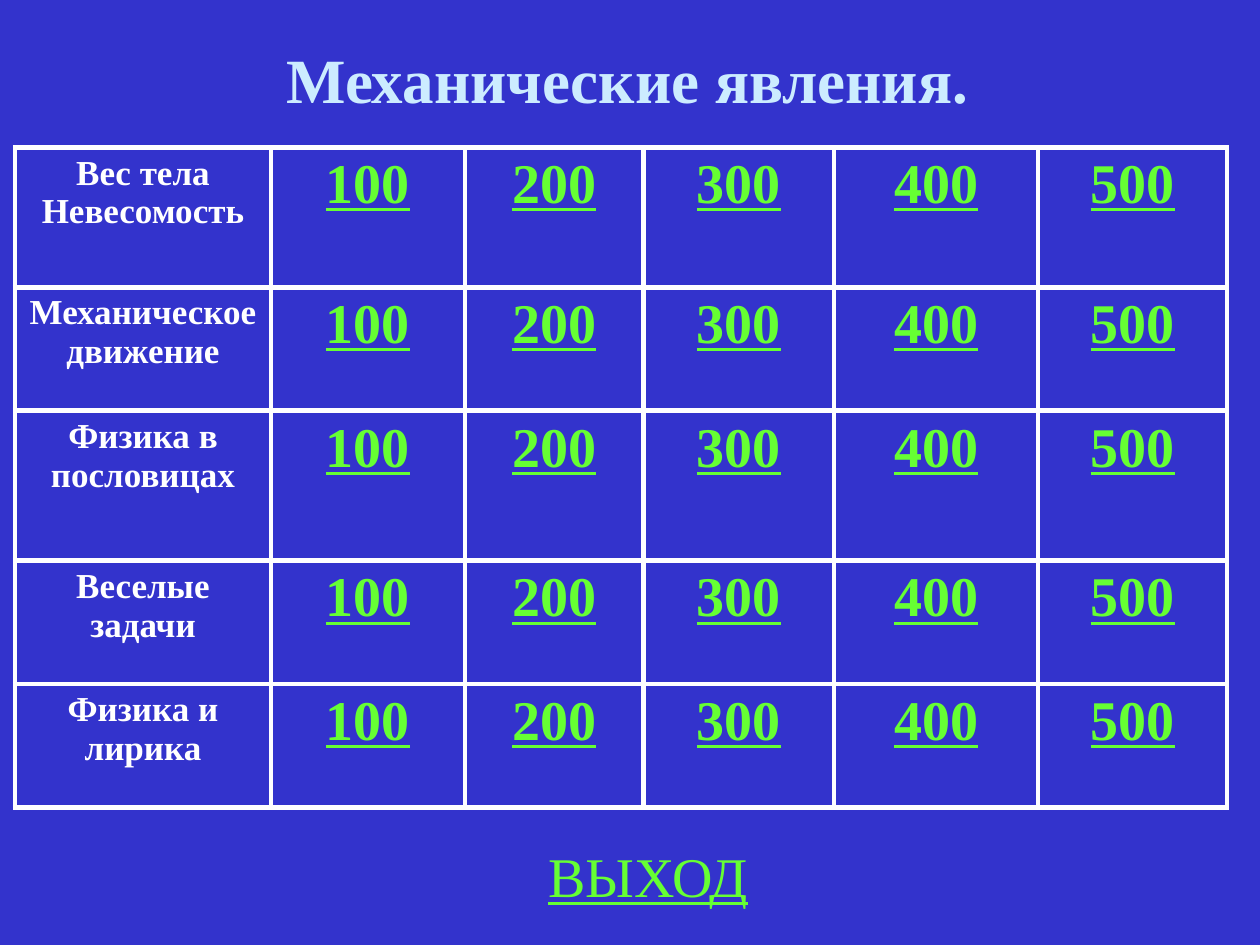
from lxml.etree import fromstring
from pptx import Presentation
from pptx.dml.color import RGBColor
from pptx.enum.text import MSO_ANCHOR, PP_ALIGN
from pptx.oxml.ns import nsdecls
from pptx.util import Inches, Pt

TITLE = "Механические явления."
TOPICS = [
    "Вес тела Невесомость",
    "Механическое движение",
    "Физика в пословицах",
    "Веселые задачи",
    "Физика и лирика",
]
POINTS = ["100", "200", "300", "400", "500"]
EXIT = "ВЫХОД"

COLUMN_WIDTHS = [2.03, 1.54, 1.42, 1.51, 1.62, 1.5]
ROW_HEIGHTS = [1.11, 0.98, 1.19, 0.98, 0.98]
BLUE, PALE, WHITE, GREEN = "3333CC", "CCECFF", "FFFFFF", "66FF33"


def rgb(code):
    return RGBColor.from_string(code)


def write(frame, text, size, color, bold=True, underline=False):
    paragraph = frame.paragraphs[0]
    paragraph.alignment = PP_ALIGN.CENTER
    run = paragraph.add_run()
    run.text = text
    font = run.font
    font.name = "Times New Roman"
    font.size = Pt(size)
    font.bold = bold
    font.underline = underline
    font.color.rgb = rgb(color)


def outline(cell, color, width):
    """Draw all four borders; they must precede the fill in tcPr."""
    for position, side in enumerate("LRTB"):
        border = fromstring(
            f'<a:ln{side} {nsdecls("a")} w="{Pt(width)}"><a:solidFill>'
            f'<a:srgbClr val="{color}"/></a:solidFill></a:ln{side}>')
        cell._tc.get_or_add_tcPr().insert(position, border)


def add_board(slide):
    board = slide.shapes.add_table(
        len(ROW_HEIGHTS), len(COLUMN_WIDTHS), Inches(0.12), Inches(1.17),
        Inches(sum(COLUMN_WIDTHS)), Inches(sum(ROW_HEIGHTS))).table
    board.first_row = board.horz_banding = False
    for column, width in zip(board.columns, COLUMN_WIDTHS):
        column.width = Inches(width)
    for row, height, topic in zip(board.rows, ROW_HEIGHTS, TOPICS):
        row.height = Inches(height)
        for cell, text in zip(row.cells, [topic, *POINTS]):
            if text == topic:
                write(cell.text_frame, text, 20, WHITE)
            else:
                write(cell.text_frame, text, 32, GREEN, underline=True)
            cell.fill.background()
            outline(cell, WHITE, 3)


def main():
    deck = Presentation()
    deck.slide_width, deck.slide_height = Inches(10), Inches(7.5)
    slide = deck.slides.add_slide(deck.slide_layouts[5])
    slide.background.fill.solid()
    slide.background.fill.fore_color.rgb = rgb(BLUE)

    title = slide.shapes.title
    title.left, title.top = Inches(0.73), Inches(0)
    title.width, title.height = Inches(8.5), Inches(1.25)
    title.text_frame.vertical_anchor = MSO_ANCHOR.MIDDLE
    write(title.text_frame, TITLE, 36, PALE)

    add_board(slide)

    exit_label = slide.shapes.add_textbox(
        Inches(4.23), Inches(6.63), Inches(1.83), Inches(0.63))
    exit_label.text_frame.word_wrap = False
    write(exit_label.text_frame, EXIT, 32, GREEN, bold=False, underline=True)

    deck.save("out.pptx")


if __name__ == "__main__":
    main()
